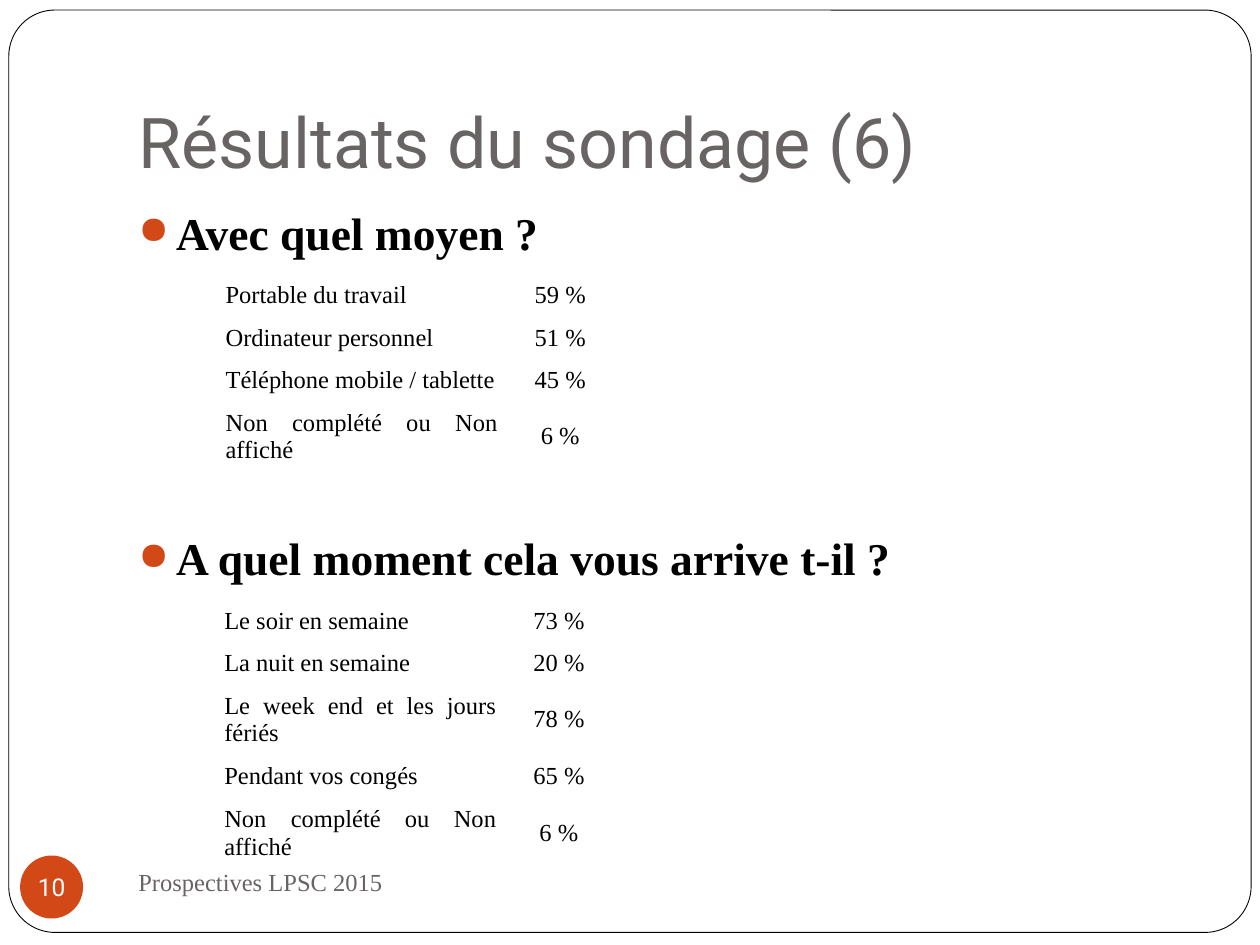
from lxml import etree
from pptx import Presentation
from pptx.dml.color import RGBColor
from pptx.enum.shapes import MSO_SHAPE
from pptx.enum.text import MSO_ANCHOR, PP_ALIGN
from pptx.oxml.ns import qn
from pptx.util import Inches, Pt

ROUNDED, OVAL = MSO_SHAPE.ROUNDED_RECTANGLE, MSO_SHAPE.OVAL
MIDDLE, BOTTOM = MSO_ANCHOR.MIDDLE, MSO_ANCHOR.BOTTOM
CENTER, JUSTIFY = PP_ALIGN.CENTER, PP_ALIGN.JUSTIFY
BLACK = RGBColor(0x00, 0x00, 0x00)
WHITE = RGBColor(0xFF, 0xFF, 0xFF)
GRAY = RGBColor(0x69, 0x64, 0x64)
ORANGE = RGBColor(0xD3, 0x48, 0x17)
SANS, SERIF = "Roboto", "Times New Roman"

DEVICES = [
    ("Portable du travail", 59),
    ("Ordinateur personnel", 51),
    ("Téléphone mobile / tablette", 45),
    ("Non complété ou Non affiché", 6),
]
MOMENTS = [
    ("Le soir en semaine", 73),
    ("La nuit en semaine", 20),
    ("Le week end et les jours fériés", 78),
    ("Pendant vos congés", 65),
    ("Non complété ou Non affiché", 6),
]


def box(left, top, width, height):
    """Return a position and size in inches."""
    return Inches(left), Inches(top), Inches(width), Inches(height)


def style_paragraph(p, text, font, size, color, bold=False):
    """Fill a paragraph and format its run."""
    p.text = text
    r = p.runs[0]
    r.font.name, r.font.size, r.font.bold = font, Pt(size), bold
    r.font.color.rgb = color


def add_text(s, place, text, font, size, color, anchor):
    """Add a wrapping text box with one paragraph."""
    tf = s.shapes.add_textbox(*place).text_frame
    tf.word_wrap = True
    tf.vertical_anchor = anchor
    style_paragraph(tf.paragraphs[0], text, font, size, color)
    return tf


def add_frame(s):
    """Add the rounded border of the slide."""
    sp = s.shapes.add_shape(ROUNDED, *box(0.07, 0.08, 9.86, 7.32))
    sp.adjustments[0] = 0.05
    sp.shadow.inherit = False
    sp.fill.solid()
    sp.fill.fore_color.rgb = WHITE
    sp.line.color.rgb = BLACK
    sp.line.width = Pt(0.5)


def add_page_number(s, number):
    """Add the page number in its disc."""
    sp = s.shapes.add_shape(OVAL, *box(0.16, 6.79, 0.5, 0.5))
    sp.shadow.inherit = False
    sp.fill.solid()
    sp.fill.fore_color.rgb = ORANGE
    sp.line.fill.background()
    tf = sp.text_frame
    tf.margin_left = tf.margin_right = tf.margin_top = tf.margin_bottom = 0
    tf.word_wrap = False
    tf.vertical_anchor = MIDDLE
    p = tf.paragraphs[0]
    style_paragraph(p, number, SANS, 14, WHITE)
    p.alignment = CENTER


def set_bullet(p):
    """Give a paragraph a hanging orange bullet."""
    pPr = p._p.get_or_add_pPr()
    pPr.set("marL", str(Inches(0.3)))
    pPr.set("indent", str(-Inches(0.3)))
    color = etree.SubElement(pPr, qn("a:buClr"))
    etree.SubElement(color, qn("a:srgbClr"), val=str(ORANGE))
    etree.SubElement(pPr, qn("a:buSzPct"), val="85000")
    etree.SubElement(pPr, qn("a:buChar"), char="●")


def add_questions(s, questions):
    """Add the bulleted questions, each a text and its space before."""
    tf = s.shapes.add_textbox(*box(1, 1.58, 8.5, 5)).text_frame
    tf.word_wrap = True
    for i, (text, space) in enumerate(questions):
        p = tf.add_paragraph() if i else tf.paragraphs[0]
        style_paragraph(p, text, SERIF, 26, BLACK, bold=True)
        p.space_before = Pt(space)
        set_bullet(p)


def add_results(s, left, top, results):
    """Add a plain table of answers and percentages."""
    place = box(left, top, 3.25, 0.31 * len(results))
    table = s.shapes.add_table(len(results), 2, *place).table
    table.first_row = table.horz_banding = False
    table.columns[0].width = Inches(2.36)
    table.columns[1].width = Inches(0.89)
    for i, (label, value) in enumerate(results):
        for j, (text, align) in enumerate([(label, JUSTIFY), (f"{value} %  ", CENTER)]):
            cell = table.cell(i, j)
            cell.fill.background()
            cell.vertical_anchor = MIDDLE
            p = cell.text_frame.paragraphs[0]
            style_paragraph(p, text, SERIF, 14, BLACK)
            p.alignment = align


def main():
    """Build the survey results slide."""
    prs = Presentation()
    prs.slide_width, prs.slide_height = Inches(10), Inches(7.5)
    s = prs.slides.add_slide(prs.slide_layouts[6])
    add_frame(s)
    title = add_text(s, box(1, 0.3, 8.5, 1.25), "Résultats du sondage (6)",
                     SANS, 40, GRAY, BOTTOM)
    title.margin_bottom = Inches(0.1)
    add_text(s, box(1, 6.75, 4.33, 0.5), "Prospectives LPSC 2015",
             SERIF, 14, GRAY, MIDDLE)
    add_page_number(s, "10")
    add_questions(s, [("Avec quel moyen ?", 5.8),
                      ("A quel moment cela vous arrive t-il ?", 154.7)])
    add_results(s, 1.69, 2.18, DEVICES)
    add_results(s, 1.68, 4.76, MOMENTS)
    prs.save("out.pptx")


if __name__ == "__main__":
    main()
